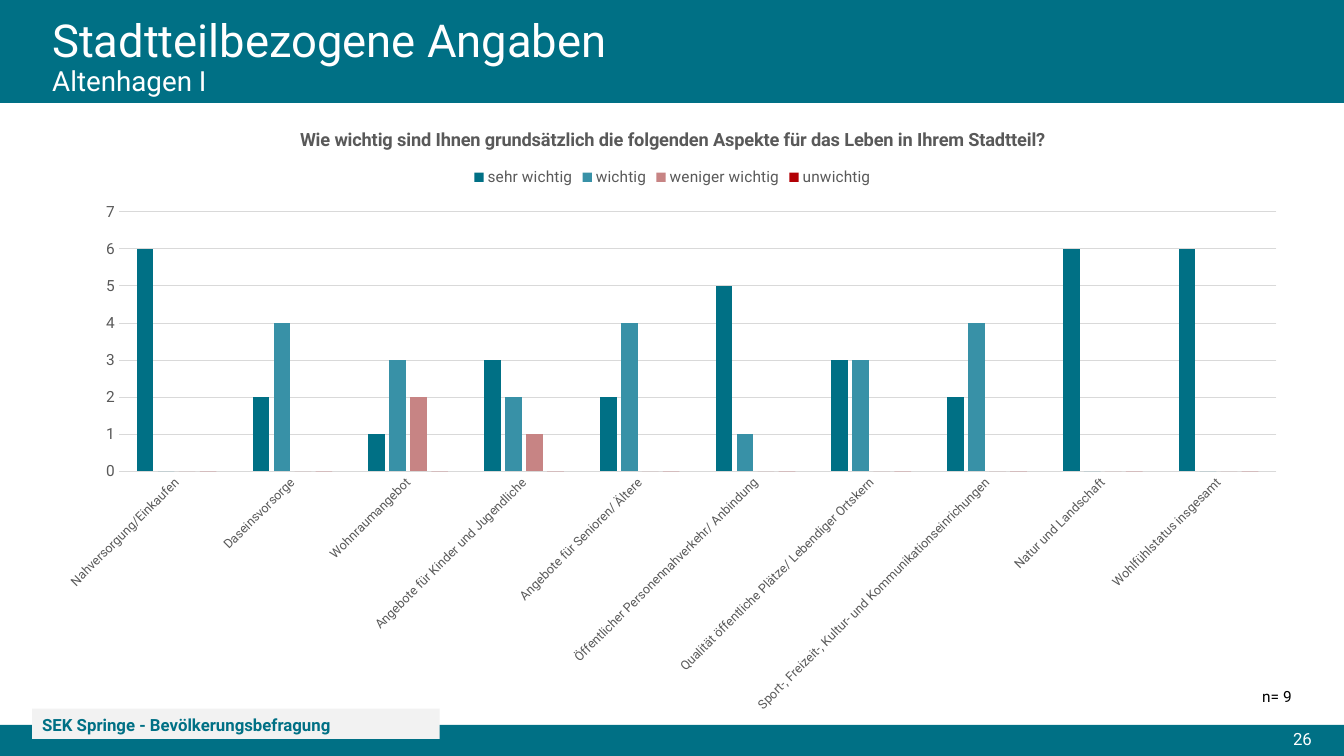
from lxml.etree import SubElement
from pptx import Presentation
from pptx.chart.data import CategoryChartData
from pptx.dml.color import RGBColor
from pptx.enum.chart import XL_CHART_TYPE, XL_LEGEND_POSITION, XL_TICK_MARK
from pptx.enum.shapes import MSO_SHAPE
from pptx.enum.text import MSO_ANCHOR, PP_ALIGN
from pptx.oxml.ns import qn
from pptx.util import Inches, Pt

TEAL, WHITE, GRAY, GRID = "007085", "FFFFFF", "595959", "D9D9D9"


def set_font(font, size, color, bold=False):
    font.name = "Roboto"
    font.size = Pt(size)
    font.bold = bold
    font.color.rgb = RGBColor.from_string(color)


def add_text(box, text, size, color, align=PP_ALIGN.LEFT, anchor=MSO_ANCHOR.MIDDLE, bold=False):
    frame = box.text_frame
    frame.word_wrap = True
    frame.vertical_anchor = anchor
    paragraph = frame.paragraphs[0]
    paragraph.alignment = align
    paragraph.add_run().text = text
    set_font(paragraph.font, size, color, bold)
    return paragraph


presentation = Presentation()
presentation.slide_width = Inches(13.33)
presentation.slide_height = Inches(7.5)
slide = presentation.slides.add_slide(presentation.slide_layouts[6])
shapes = slide.shapes

bars = []
for left, top, width, height, color in [
    (0, 0, 13.33, 1.02, TEAL),
    (0, 7.19, 13.33, 0.31, TEAL),
    (0.32, 7.03, 4.04, 0.3, "F2F2F2"),
]:
    bar = shapes.add_shape(MSO_SHAPE.RECTANGLE, Inches(left), Inches(top), Inches(width), Inches(height))
    bar.shadow.inherit = False
    bar.fill.solid()
    bar.fill.fore_color.rgb = RGBColor.from_string(color)
    bar.line.fill.background()
    bars.append(bar)
add_text(bars[2], "SEK Springe - Bevölkerungsbefragung", 12, TEAL, bold=True).line_spacing = 1.07

page_number = shapes.add_textbox(Inches(8.72), Inches(7.18), Inches(4.39), Inches(0.3))
add_text(page_number, "26", 12, WHITE, PP_ALIGN.RIGHT)

chart_data = CategoryChartData()
chart_data.categories = [
    "Nahversorgung/Einkaufen",
    "Daseinsvorsorge",
    "Wohnraumangebot",
    "Angebote für Kinder und Jugendliche",
    "Angebote für Senioren/ Ältere",
    "Öffentlicher Personennahverkehr/ Anbindung",
    "Qualität öffentliche Plätze/ Lebendiger Ortskern",
    "Sport-, Freizeit-, Kultur- und Kommunikationseinrichungen",
    "Natur und Landschaft",
    "Wohlfühlstatus insgesamt",
]
ratings = [
    ("sehr wichtig", (6, 2, 1, 3, 2, 5, 3, 2, 6, 6), TEAL),
    ("wichtig", (0, 4, 3, 2, 4, 1, 3, 4, 0, 0), "3891A7"),
    ("weniger wichtig", (0, 0, 2, 1, 0, 0, 0, 0, 0, 0), "C78484"),
    ("unwichtig", (0,) * 10, "B20005"),
]
for name, values, color in ratings:
    chart_data.add_series(name, values)
chart = shapes.add_chart(
    XL_CHART_TYPE.COLUMN_CLUSTERED, Inches(0.43), Inches(1.06), Inches(12.48), Inches(6.13), chart_data
).chart
set_font(chart.font, 11, "000000")

chart.has_title = True
title_paragraph = chart.chart_title.text_frame.paragraphs[0]
title_paragraph.add_run().text = (
    "Wie wichtig sind Ihnen grundsätzlich die folgenden Aspekte für das Leben in Ihrem Stadtteil?"
)
set_font(title_paragraph.font, 13, GRAY, bold=True)
chart.chart_title.include_in_layout = False

chart.has_legend = True
chart.legend.position = XL_LEGEND_POSITION.TOP
chart.legend.include_in_layout = False
set_font(chart.legend.font, 11, GRAY)

plot = chart.plots[0]
plot.gap_width = 219
plot.overlap = -27
plot.vary_by_categories = False
for series, (name, values, color) in zip(plot.series, ratings):
    series.format.fill.solid()
    series.format.fill.fore_color.rgb = RGBColor.from_string(color)
    series.invert_if_negative = False

category_axis, value_axis = chart.category_axis, chart.value_axis
for axis, size in [(category_axis, 9), (value_axis, 11)]:
    axis.major_tick_mark = XL_TICK_MARK.NONE
    axis.minor_tick_mark = XL_TICK_MARK.NONE
    set_font(axis.tick_labels.font, size, GRAY)
value_axis.minimum_scale = 0
value_axis.maximum_scale = 7
value_axis.major_unit = 1
value_axis.has_major_gridlines = True
value_axis.format.line.fill.background()
for line in (category_axis.format.line, value_axis.major_gridlines.format.line):
    line.color.rgb = RGBColor.from_string(GRID)
    line.width = Pt(0.75)
category_axis._element.txPr.find(qn("a:bodyPr")).set("rot", "-2700000")

plot_area = chart._chartSpace.chart.plotArea
layout = plot_area.find(qn("c:layout"))
if layout is None:
    layout = SubElement(plot_area, qn("c:layout"))
    plot_area.insert(0, layout)
manual_layout = SubElement(layout, qn("c:manualLayout"))
for tag, value in [
    ("layoutTarget", "inner"), ("xMode", "edge"), ("yMode", "edge"),
    ("x", "0.06"), ("y", "0.17"), ("w", "0.92"), ("h", "0.42"),
]:
    SubElement(manual_layout, qn(f"c:{tag}")).set("val", value)

heading = shapes.add_textbox(Inches(0.42), Inches(0.21), Inches(11.5), Inches(0.73))
heading_paragraph = add_text(heading, "Stadtteilbezogene Angaben", 32.4, WHITE)
heading_paragraph.line_spacing = 0.9
heading_paragraph.add_line_break()
district = heading_paragraph.add_run()
district.text = "Altenhagen I"
district.font.size = Pt(19.8)

sample_size = shapes.add_textbox(Inches(12.3), Inches(6.77), Inches(0.61), Inches(0.29))
add_text(sample_size, "n= 9", 11, "000000", PP_ALIGN.RIGHT, MSO_ANCHOR.TOP)

presentation.save("out.pptx")
